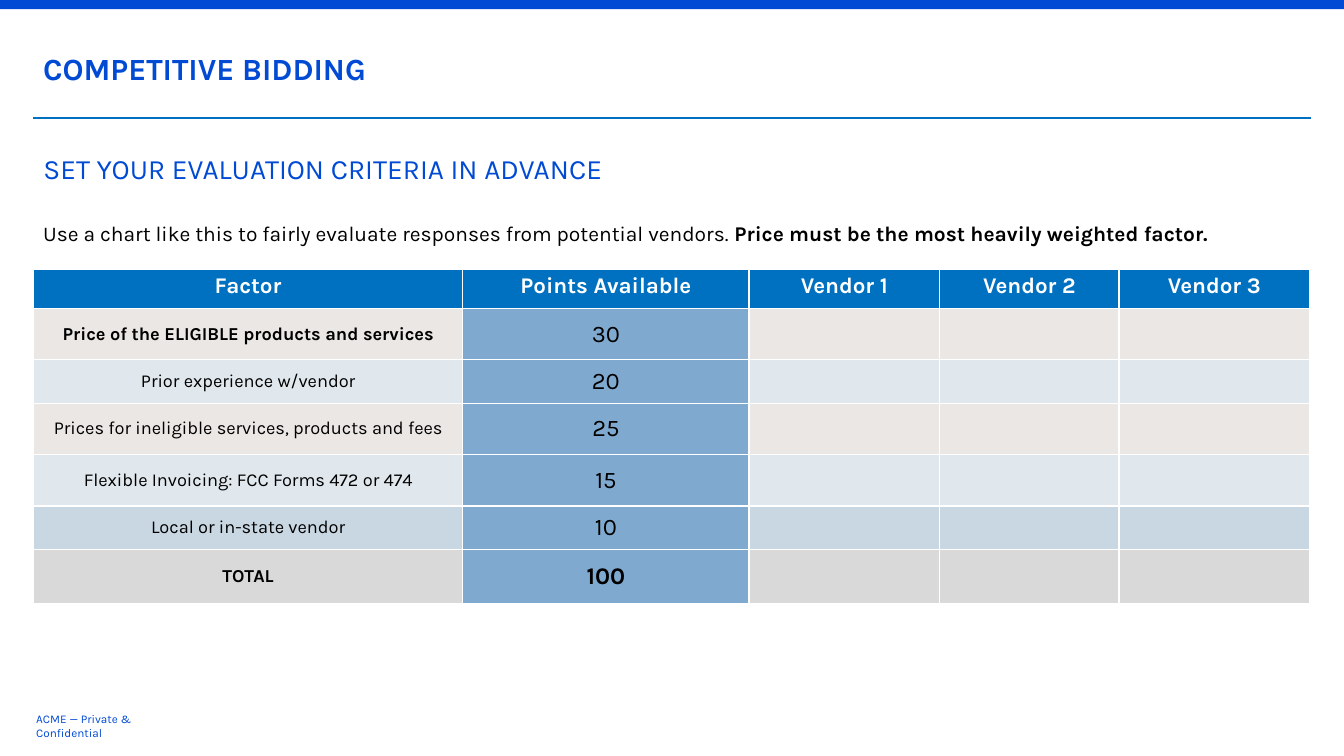
from dataclasses import dataclass

from pptx import Presentation
from pptx.dml.color import RGBColor
from pptx.enum.shapes import MSO_CONNECTOR, MSO_SHAPE
from pptx.enum.text import MSO_ANCHOR, MSO_AUTO_SIZE, PP_ALIGN
from pptx.oxml.ns import qn
from pptx.oxml.xmlchemy import OxmlElement
from pptx.util import Emu, Pt

STRAIGHT = MSO_CONNECTOR.STRAIGHT
RECTANGLE = MSO_SHAPE.RECTANGLE
TOP, MIDDLE = MSO_ANCHOR.TOP, MSO_ANCHOR.MIDDLE
LEFT, CENTER = PP_ALIGN.LEFT, PP_ALIGN.CENTER
NO_AUTOFIT = MSO_AUTO_SIZE.NONE

EMU_PER_PX = 9144  # 100 px to the inch
SLIDE_WIDTH, SLIDE_HEIGHT = 1333, 750
MARGIN, CONTENT_WIDTH = 33, 1267
FONT = "Karla"
BLUE, HEADER_BLUE, BLACK, WHITE = "004AD4", "0070C0", "000000", "FFFFFF"


@dataclass
class Run:
    text: str
    size: float
    color: str = BLACK
    bold: bool = False


@dataclass
class TextBlock:
    top: int
    height: int
    runs: list[Run]
    width: int = CONTENT_WIDTH
    anchor: MSO_ANCHOR = MIDDLE
    inset: int = 10
    space_after: int = 0


@dataclass
class Fill:
    color: str
    opacity: int = 100


@dataclass
class Factor:
    name: str
    points: str
    height: int
    fill: Fill
    bold_name: bool = False
    bold_points: bool = False


SAND, MIST = Fill("BDB1A6", 30), Fill("C3D3DF", 50)
STEEL, GREY = Fill("C3D3DF", 90), Fill("D9D9D9")
POINTS_FILL = Fill("00549F", 50)

TITLE = TextBlock(133, 67, [Run("SET YOUR EVALUATION CRITERIA IN ADVANCE", 20, BLUE)])
TEXT_BOXES = [
    TextBlock(33, 69, [Run("COMPETITIVE BIDDING", 22, BLUE, True)]),
    TextBlock(214, 53, [
        Run("Use a chart like this to fairly evaluate responses from potential vendors. ", 15),
        Run("Price must be the most heavily weighted factor.", 15, bold=True),
    ], anchor=TOP, space_after=8),
    TextBlock(710, 20, [Run("ACME — Private & Confidential", 8.4, BLUE)],
              width=156, inset=3),
]

HEADERS = ["Factor", "Points Available", "Vendor 1", "Vendor 2", "Vendor 3"]
COLUMN_WIDTHS = [426, 284, 189, 178, 189]
HEADER_HEIGHT, TABLE_TOP = 39, 267
FACTORS = [
    Factor("Price of the ELIGIBLE products and services", "30", 51, SAND, bold_name=True),
    Factor("Prior experience w/vendor", "20", 43, MIST),
    Factor("Prices for ineligible services, products and fees", "25", 51, SAND),
    Factor("Flexible Invoicing: FCC Forms 472 or 474", "15", 51, MIST),
    Factor("Local or in-state vendor", "10", 43, STEEL),
    Factor("TOTAL", "100", 54, GREY, True, True),
]


def px(length: int) -> Emu:
    return Emu(length * EMU_PER_PX)


def rgb(color: str) -> RGBColor:
    return RGBColor.from_string(color)


def write_runs(paragraph, runs: list[Run], alignment: PP_ALIGN) -> None:
    paragraph.alignment = alignment
    for item in runs:
        run = paragraph.add_run()
        run.text = item.text
        run.font.name = FONT
        run.font.size = Pt(item.size)
        run.font.bold = item.bold
        run.font.color.rgb = rgb(item.color)


def fill_text_shape(shape, block: TextBlock) -> None:
    shape.left, shape.top = px(MARGIN), px(block.top)
    shape.width, shape.height = px(block.width), px(block.height)
    frame = shape.text_frame
    frame.word_wrap = True
    frame.auto_size = NO_AUTOFIT
    frame.vertical_anchor = block.anchor
    frame.margin_left = frame.margin_right = px(block.inset)
    frame.margin_top = frame.margin_bottom = px(min(block.inset, 5))
    paragraph = frame.paragraphs[0]
    paragraph.space_after = Pt(block.space_after)
    write_runs(paragraph, block.runs, LEFT)


def style_cell(cell, fill: Fill) -> None:
    properties = cell._tc.get_or_add_tcPr()
    # White borders come before the fill in the cell properties
    for side in ("a:lnL", "a:lnR", "a:lnT", "a:lnB"):
        border = OxmlElement(side)
        border.set("w", str(Pt(1)))
        solid = OxmlElement("a:solidFill")
        color = OxmlElement("a:srgbClr")
        color.set("val", WHITE)
        solid.append(color)
        border.append(solid)
        properties.append(border)
    cell.fill.solid()
    cell.fill.fore_color.rgb = rgb(fill.color)
    if fill.opacity < 100:
        alpha = OxmlElement("a:alpha")
        alpha.set("val", str(fill.opacity * 1000))
        properties.find(qn("a:solidFill")).find(qn("a:srgbClr")).append(alpha)


def add_evaluation_table(slide) -> None:
    heights = [HEADER_HEIGHT] + [factor.height for factor in FACTORS]
    table = slide.shapes.add_table(
        len(heights), len(HEADERS), px(MARGIN), px(TABLE_TOP),
        px(sum(COLUMN_WIDTHS)), px(sum(heights))).table
    table.horz_banding = False
    for column, width in zip(table.columns, COLUMN_WIDTHS):
        column.width = px(width)
    for row, height in zip(table.rows, heights):
        row.height = px(height)

    # Header row
    for cell, header in zip(table.rows[0].cells, HEADERS):
        cell.margin_left = cell.margin_right = px(9)
        cell.margin_top = cell.margin_bottom = px(4)
        style_cell(cell, Fill(HEADER_BLUE))
        write_runs(cell.text_frame.paragraphs[0], [Run(header, 16, WHITE, True)], CENTER)

    # Factor rows, with the vendor cells left open
    for row_index, factor in enumerate(FACTORS, start=1):
        cells = list(table.rows[row_index].cells)
        for column_index, cell in enumerate(cells):
            cell.margin_left = cell.margin_right = 0
            cell.margin_top = cell.margin_bottom = 0
            cell.vertical_anchor = MIDDLE
            style_cell(cell, POINTS_FILL if column_index == 1 else factor.fill)
        labels = [Run(factor.name, 13, bold=factor.bold_name),
                  Run(factor.points, 17, bold=factor.bold_points)]
        for cell, label in zip(cells, labels):
            write_runs(cell.text_frame.paragraphs[0], [label], CENTER)


def add_frame(slide) -> None:
    rule = slide.shapes.add_connector(
        STRAIGHT, px(MARGIN), px(117), px(MARGIN + CONTENT_WIDTH), px(117))
    rule.line.color.rgb = rgb(HEADER_BLUE)
    rule.line.width = Pt(1.25)
    rule._element.spPr.append(OxmlElement("a:effectLst"))

    band = slide.shapes.add_shape(RECTANGLE, 0, 0, px(SLIDE_WIDTH), px(9))
    band.shadow.inherit = False
    band.fill.solid()
    band.fill.fore_color.rgb = rgb(BLUE)
    band.line.fill.background()


def main() -> None:
    presentation = Presentation()
    presentation.slide_width = px(SLIDE_WIDTH)
    presentation.slide_height = px(SLIDE_HEIGHT)
    title_only = presentation.slide_layouts[5]
    slide = presentation.slides.add_slide(title_only)

    add_frame(slide)
    fill_text_shape(slide.shapes.title, TITLE)
    for block in TEXT_BOXES:
        fill_text_shape(slide.shapes.add_textbox(0, 0, 0, 0), block)
    add_evaluation_table(slide)

    presentation.save("out.pptx")


if __name__ == "__main__":
    main()
